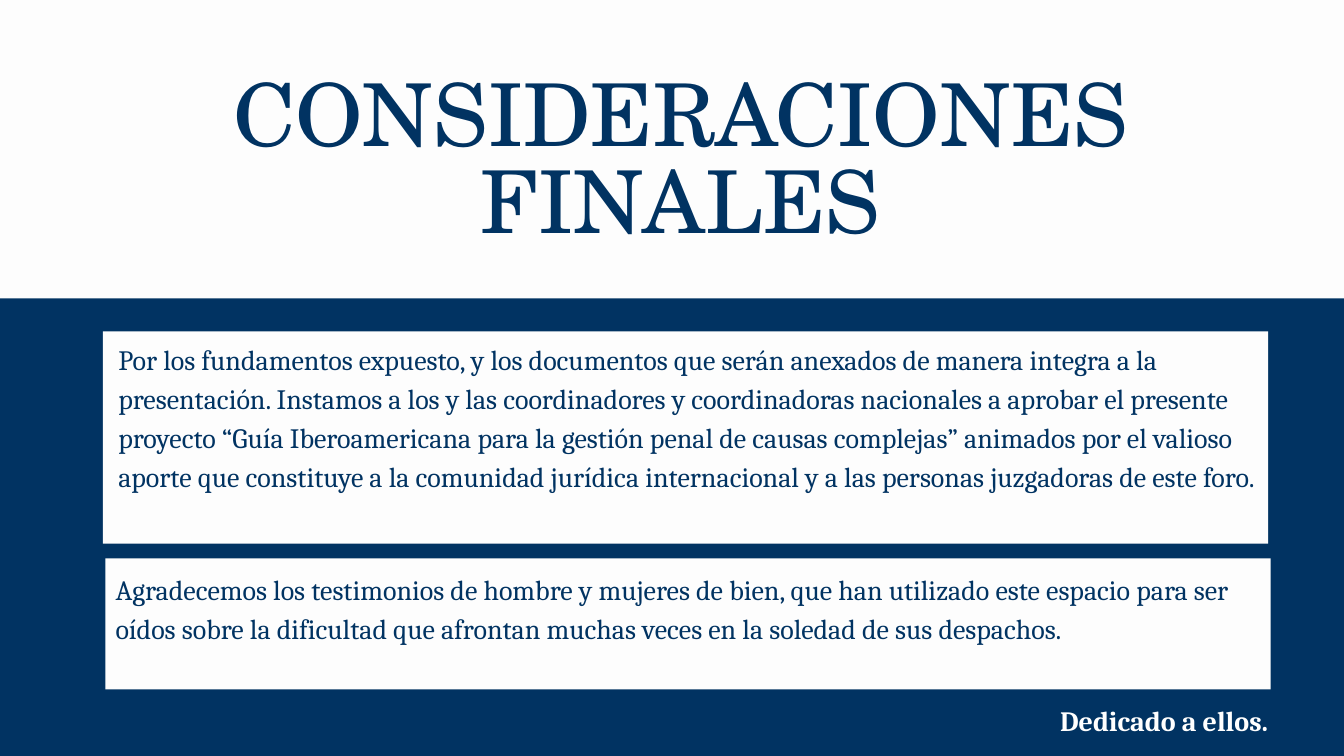
from pptx import Presentation
from pptx.dml.color import RGBColor
from pptx.enum.shapes import MSO_SHAPE
from pptx.enum.text import MSO_AUTO_SIZE, PP_ALIGN
from pptx.util import Pt

NAVY = "013362"
PAPER = "FDFDFD"
WHITE = "FFFFFF"
TITLE_FONT = "TeX Gyre Schola"
BODY_FONT = "Cambria"


def color(hex_string):
    return RGBColor.from_string(hex_string)


class SlideBuilder:
    """Holds the text style and the slide being filled."""

    body_size = 30
    body_spacing = 42

    def __init__(self, slide):
        self.slide = slide

    def background(self, fill):
        self.slide.background.fill.solid()
        self.slide.background.fill.fore_color.rgb = color(fill)

    def panel(self, left, top, width, height):
        shape = self.slide.shapes.add_shape(
            MSO_SHAPE.RECTANGLE, Pt(left), Pt(top), Pt(width), Pt(height))
        shape.shadow.inherit = False
        shape.fill.solid()
        shape.fill.fore_color.rgb = color(PAPER)
        shape.line.fill.background()

    def text(self, content, left, top, width, height, font=BODY_FONT,
             size=body_size, spacing=body_spacing, ink=NAVY,
             align=PP_ALIGN.LEFT, bold=False):
        box = self.slide.shapes.add_textbox(
            Pt(left), Pt(top), Pt(width), Pt(height))
        frame = box.text_frame
        frame.word_wrap = True
        frame.auto_size = MSO_AUTO_SIZE.SHAPE_TO_FIT_TEXT
        frame.margin_left = frame.margin_right = 0
        frame.margin_top = frame.margin_bottom = 0
        paragraph = frame.paragraphs[0]
        paragraph.text = content
        paragraph.alignment = align
        paragraph.line_spacing = Pt(spacing)
        paragraph.font.name = font
        paragraph.font.size = Pt(size)
        paragraph.font.bold = bold
        paragraph.font.color.rgb = color(ink)


def main():
    presentation = Presentation()
    presentation.slide_width = Pt(1440)
    presentation.slide_height = Pt(810)
    blank_layout = presentation.slide_layouts[6]
    builder = SlideBuilder(presentation.slides.add_slide(blank_layout))

    builder.background(NAVY)
    builder.panel(0, 0, 1440, 319.7)
    builder.panel(110.2, 355, 1248.5, 227.5)
    builder.panel(113, 598.3, 1248.5, 140.4)

    builder.text("CONSIDERACIONES FINALES", 239, 81.4, 980.6, 190.8,
                 font=TITLE_FONT, size=92.9, spacing=93.8,
                 align=PP_ALIGN.CENTER)
    builder.text(
        "Por los fundamentos expuesto, y los documentos que serán anexados de "
        "manera integra a la presentación. Instamos a los y las coordinadores "
        "y coordinadoras nacionales a aprobar el presente proyecto “Guía "
        "Iberoamericana para la gestión penal de causas complejas” animados "
        "por el valioso aporte que constituye a la comunidad jurídica "
        "internacional y a las personas juzgadoras de este foro.",
        126.7, 360.7, 1220.4, 252)
    builder.text(
        "Agradecemos los testimonios de hombre y mujeres de bien, que han "
        "utilizado este espacio para ser oídos sobre la dificultad que "
        "afrontan muchas veces en la soledad de sus despachos.",
        123.8, 607, 1223.3, 167.8)
    builder.text("Dedicado a ellos.", 1131.8, 748.1, 231.1, 41.8,
                 ink=WHITE, align=PP_ALIGN.CENTER, bold=True)

    presentation.save("out.pptx")


if __name__ == "__main__":
    main()
